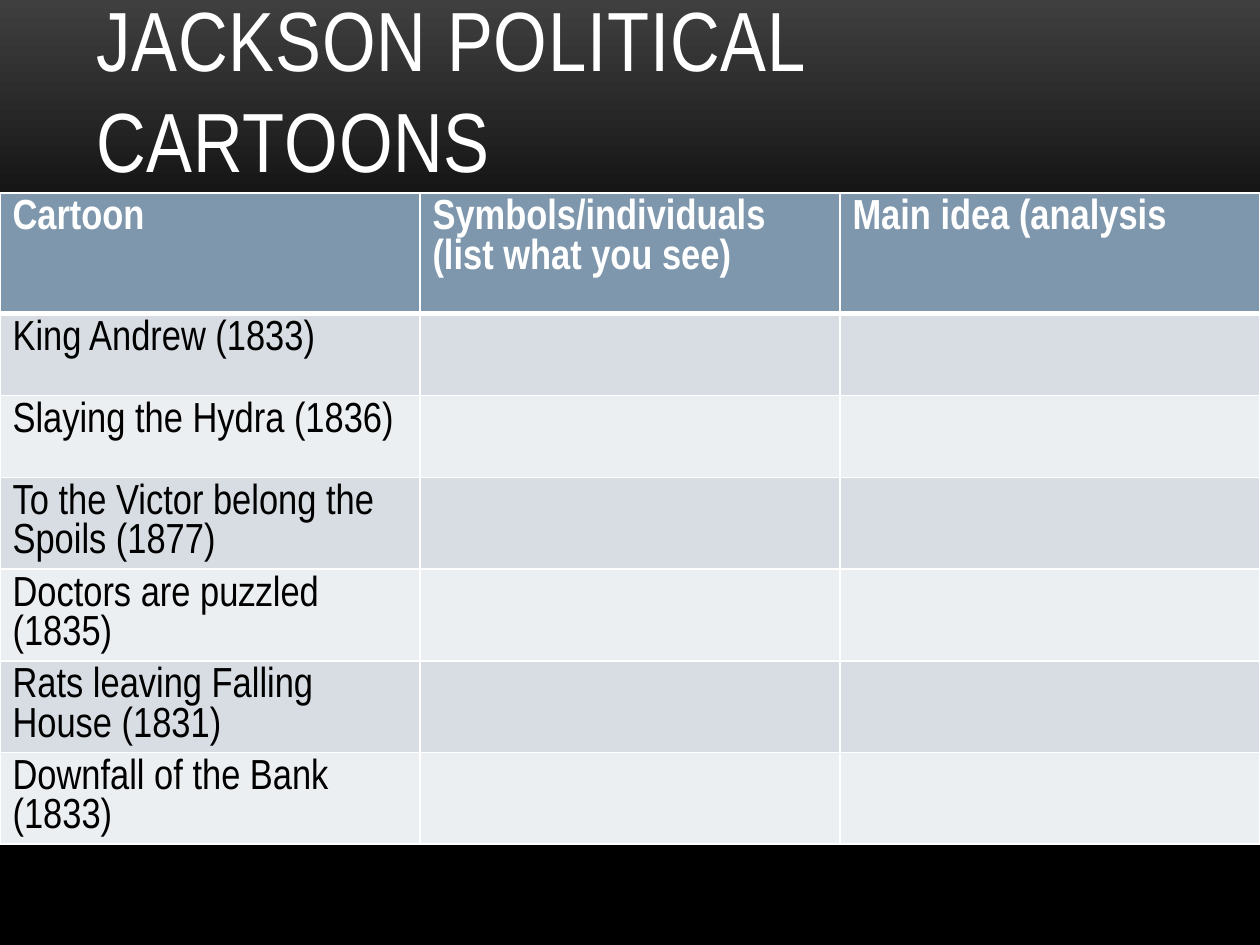
"""Build the Jackson political cartoons worksheet slide."""
from lxml import etree
from pptx import Presentation
from pptx.dml.color import RGBColor
from pptx.enum.text import MSO_ANCHOR
from pptx.oxml.ns import qn
from pptx.util import Pt

BOTTOM = MSO_ANCHOR.BOTTOM
WHITE = RGBColor(0xFF, 0xFF, 0xFF)
BLACK = RGBColor(0x00, 0x00, 0x00)
CHARCOAL = RGBColor(0x3F, 0x3F, 0x3F)
HEADER_BLUE = RGBColor(0x7E, 0x97, 0xAD)
BANDS = [RGBColor(0xEC, 0xEF, 0xF1), RGBColor(0xD8, 0xDD, 0xE3)]

FONT = "Arial Narrow"
TITLE_FORMAT = {"name": FONT, "size": Pt(48), "bold": False}
HEADER_FORMAT = {"name": FONT, "size": Pt(24), "bold": True}
BODY_FORMAT = {"name": FONT, "size": Pt(24), "bold": False}

HEADINGS = ["Cartoon", "Symbols/individuals (list what you see)", "Main idea (analysis"]
CARTOONS = [
    "King Andrew (1833)",
    "Slaying the Hydra (1836)",
    "To the Victor belong the Spoils (1877)",
    "Doctors are puzzled (1835)",
    "Rats leaving Falling House (1831)",
    "Downfall of the Bank (1833)",
]


def write(paragraph, text, font_format, color):
    paragraph.line_spacing = 1.0
    run = paragraph.add_run()
    run.text = text
    for name, value in font_format.items():
        setattr(run.font, name, value)
    run.font.color.rgb = color
    return run


def add_border(cell, side, width):
    line = etree.SubElement(cell._tc.get_or_add_tcPr(), qn(f"a:ln{side}"), w=str(Pt(width)))
    fill = etree.SubElement(line, qn("a:solidFill"))
    etree.SubElement(fill, qn("a:srgbClr"), val=str(WHITE))


prs = Presentation()
prs.slide_width, prs.slide_height = Pt(720), Pt(540)
slide = prs.slides.add_slide(prs.slide_layouts[6])

backdrop = slide.background.fill
backdrop.gradient()
backdrop.gradient_angle = 270
for stop, color, position in zip(backdrop.gradient_stops, [CHARCOAL, BLACK], [0, 0.31]):
    stop.color.rgb = color
    stop.position = position

rows = [HEADINGS] + [[cartoon, "", ""] for cartoon in CARTOONS]
worksheet = slide.shapes.add_table(
    len(rows), len(HEADINGS), Pt(0), Pt(110.16), Pt(720), Pt(349.92)
).table
for column in worksheet.columns:
    column.width = Pt(240)

for row_index, texts in enumerate(rows):
    is_header = row_index == 0
    worksheet.rows[row_index].height = Pt(69.12 if is_header else 46.8)
    for column_index, text in enumerate(texts):
        cell = worksheet.cell(row_index, column_index)
        widths = {"L": 1, "R": 1, "T": 3 if row_index == 1 else 1, "B": 3 if is_header else 1}
        for side, width in widths.items():
            add_border(cell, side, width)
        cell.fill.solid()
        cell.fill.fore_color.rgb = HEADER_BLUE if is_header else BANDS[row_index % 2]
        if text:
            write(
                cell.text_frame.paragraphs[0],
                text,
                HEADER_FORMAT if is_header else BODY_FORMAT,
                WHITE if is_header else BLACK,
            )

title = slide.shapes.add_textbox(Pt(48), Pt(21.6), Pt(624), Pt(90)).text_frame
title.word_wrap = True
title.vertical_anchor = BOTTOM
title_run = write(title.paragraphs[0], "JACKSON POLITICAL CARTOONS", TITLE_FORMAT, WHITE)
title_run.font._element.set("spc", "50")

prs.save("out.pptx")
